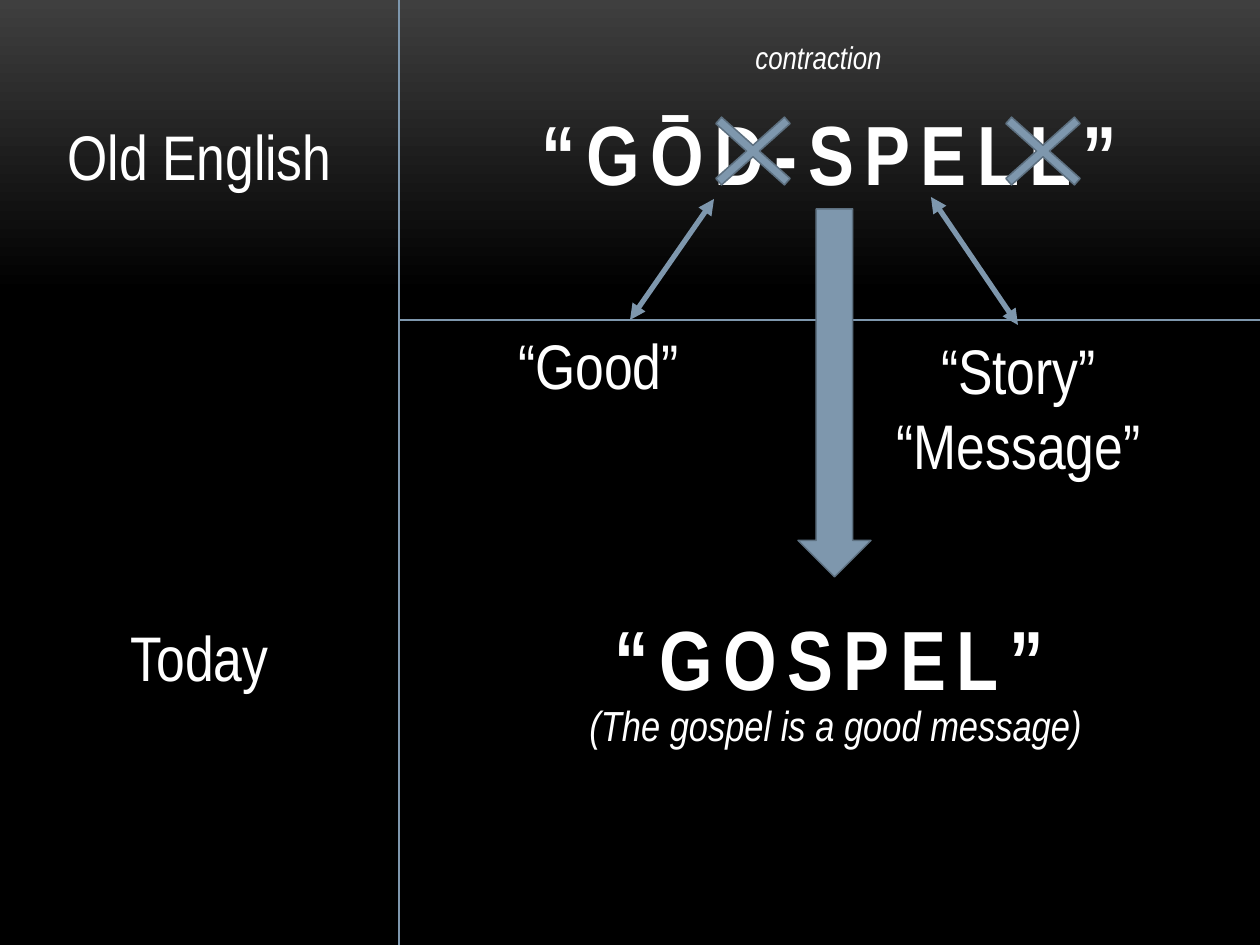
from lxml import etree
from pptx import Presentation
from pptx.dml.color import RGBColor
from pptx.enum.shapes import MSO_CONNECTOR as Link, MSO_SHAPE as Form
from pptx.enum.text import MSO_AUTO_SIZE as Auto, PP_ALIGN as Align
from pptx.oxml.ns import qn
from pptx.util import Emu, Pt

WIDE, HIGH, EDGE, RULE = 1260, 945, 399, 320
MAIN = WIDE - EDGE


def px(num):
    return Emu(round(num * 914400 / 126))


def tint(code):
    return RGBColor.from_string(code)


def write(frame, text, size=36, bold=False, slant=False, gap=0, align=Align.CENTER):
    para = frame.paragraphs[0]
    para.alignment = align
    run = para.add_run()
    run.text = text
    font = run.font
    font.name, font.size = "Arial Narrow", Pt(size)
    font.bold, font.italic = bold, slant
    font.color.rgb = tint("FFFFFF")
    if gap:
        run._r.get_or_add_rPr().set("spc", str(gap * 100))


class Board:
    """Draws styled elements on the current slide."""

    steel, dark = "7E97AD", "5D7080"

    def __init__(self, deck):
        self.slide = deck.slides.add_slide(deck.slide_layouts[6])
        self.shapes = self.slide.shapes

    def shade(self, top, base, stop):
        fill = self.slide.background.fill
        fill.gradient()
        fill.gradient_angle = 270
        first, last = fill.gradient_stops
        first.color.rgb, first.position = tint(top), 0
        last.color.rgb, last.position = tint(base), stop

    def text(self, box, words, wrap=True, **style):
        frame = self.shapes.add_textbox(*map(px, box)).text_frame
        frame.word_wrap = wrap
        frame.auto_size = Auto.SHAPE_TO_FIT_TEXT
        write(frame, words, **style)

    def line(self, ends, width=0.75, heads=False):
        link = self.shapes.add_connector(Link.STRAIGHT, *map(px, ends))
        link.line.color.rgb = tint(self.steel)
        link.line.width = Pt(width)
        if heads:
            node = link.line._get_or_add_ln()
            for tag in ("a:headEnd", "a:tailEnd"):
                etree.SubElement(node, qn(tag), type="triangle")
        etree.SubElement(link._element.spPr, qn("a:effectLst"))

    def shape(self, form, box, thick=None):
        item = self.shapes.add_shape(form, *map(px, box))
        item.shadow.inherit = False
        item.fill.solid()
        item.fill.fore_color.rgb = tint(self.steel)
        item.line.color.rgb = tint(self.dark)
        item.line.width = Pt(0.85)
        if thick is not None:
            item.adjustments[0] = thick


def main():
    deck = Presentation()
    deck.slide_width, deck.slide_height = px(WIDE), px(HIGH)
    board = Board(deck)
    board.shade("3F3F3F", "000000", 0.31)

    title = dict(size=48, bold=True, gap=6)
    board.text((EDGE, 95, MAIN, 115), "“GŌD-SPELL”", **title)
    board.line((EDGE, HIGH, EDGE, 0))
    board.text((0, 111, EDGE, 89), "Old English")
    board.line((714, 199, 630, RULE), 3, True)
    board.text((EDGE, RULE, EDGE, 89), "“Good”")
    board.text((819, 325, EDGE, 165), "“Story” “Message”")
    board.line((931, 197, 1018, 325), 3, True)
    board.line((EDGE, RULE, WIDE, RULE))

    board.shape(Form.DOWN_ARROW, (798, 209, 73, 368))
    for left in (687, 977):
        board.shape(Form.MATH_MULTIPLY, (left, 92, 132, 118), 0.073)

    board.text((EDGE, 600, MAIN, 115), "“GOSPEL”", **title)
    board.text((743, 32, 173, 50), "contraction", wrap=False,
               size=18, slant=True, align=Align.LEFT)
    board.text((557, 693, 557, 63), "(The gospel is a good message)",
               wrap=False, size=24, slant=True)
    board.text((0, 612, EDGE, 89), "Today")
    deck.save("out.pptx")


if __name__ == "__main__":
    main()
